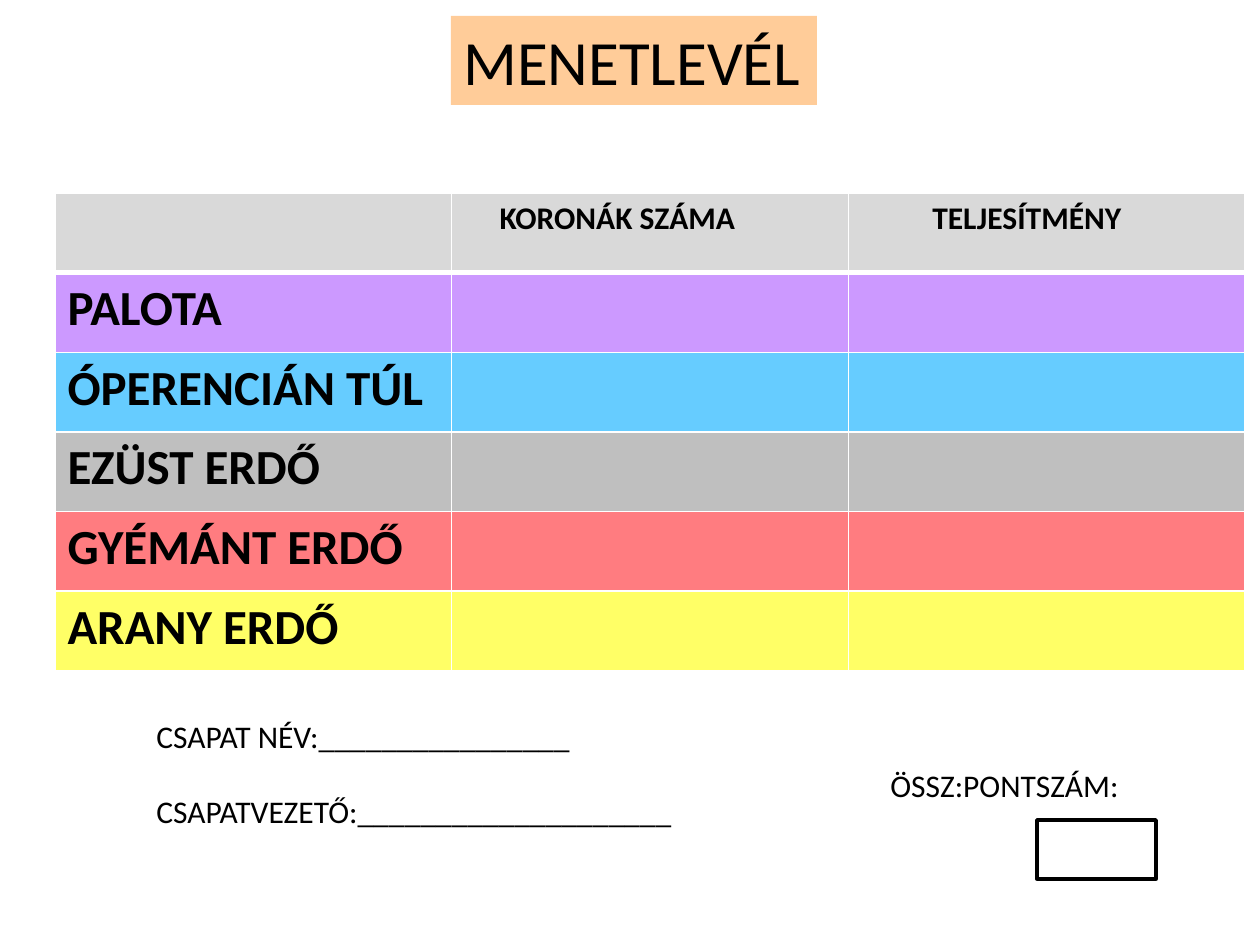
import pptx
import pptx.dml.color
import pptx.enum.shapes
import pptx.oxml
import pptx.oxml.ns
import pptx.util

EMU_PER_PX = 914400 / 126
FONT = "Calibri"
COLORS = {
    "text": "000000",
    "white": "FFFFFF",
    "title": "FFCC99",
    "header": "D9D9D9",
    "palace": "CC99FF",
    "beyond": "66CCFF",
    "silver": "BFBFBF",
    "diamond": "FF7C80",
    "gold": "FFFF66",
}
# Column heading and its indent in px
HEADINGS = [("", 13), ("KORONÁK SZÁMA", 48), ("TELJESÍTMÉNY", 84)]
STATIONS = [
    ("PALOTA", "palace"),
    ("ÓPERENCIÁN TÚL", "beyond"),
    ("EZÜST ERDŐ", "silver"),
    ("GYÉMÁNT ERDŐ", "diamond"),
    ("ARANY ERDŐ", "gold"),
]


def px(length):
    return pptx.util.Emu(round(length * EMU_PER_PX))


def rgb(name):
    return pptx.dml.color.RGBColor.from_string(COLORS[name])


def style_text(para, size, bold=False):
    for span in para.runs:
        span.font.name = FONT
        span.font.size = pptx.util.Pt(size)
        span.font.bold = bold
        span.font.color.rgb = rgb("text")


def add_text(page, left, top, width, height, lines, size, gap=0):
    box = page.shapes.add_textbox(px(left), px(top), px(width), px(height))
    frame = box.text_frame
    frame.word_wrap = False
    frame.text = "\n".join(lines)
    for index, para in enumerate(frame.paragraphs):
        if index:
            para.space_before = pptx.util.Pt(gap)
        style_text(para, size)
    return box


def set_borders(cell, top, bottom):
    properties = cell._tc.get_or_add_tcPr()
    for side, width in (("L", 1), ("R", 1), ("T", top), ("B", bottom)):
        properties.append(pptx.oxml.parse_xml(
            f'<a:ln{side} {pptx.oxml.ns.nsdecls("a")} w="{pptx.util.Pt(width)}">'
            f'<a:solidFill><a:srgbClr val="{COLORS["white"]}"/></a:solidFill>'
            f'</a:ln{side}>'))


def fill_cell(cell, text, color, size, top=1, bottom=1):
    set_borders(cell, top, bottom)
    cell.fill.solid()
    cell.fill.fore_color.rgb = rgb(color)
    if text:
        cell.text_frame.text = text
        style_text(cell.text_frame.paragraphs[0], size, bold=True)


def add_score_table(page, left, top, width, height):
    table = page.shapes.add_table(
        len(STATIONS) + 1, len(HEADINGS),
        px(left), px(top), px(width), px(height)).table
    # Heading row, with a heavy rule below it
    for column, (heading, indent) in enumerate(HEADINGS):
        cell = table.cell(0, column)
        fill_cell(cell, heading, "header", 18, bottom=3)
        cell.margin_left = px(indent)
    # One coloured row per station
    for row, (station, color) in enumerate(STATIONS, start=1):
        for column in range(len(HEADINGS)):
            fill_cell(table.cell(row, column), "" if column else station,
                      color, 28, top=3 if row == 1 else 1)


def add_score_frame(page, left, top, width, height):
    frame = page.shapes.add_shape(
        pptx.enum.shapes.MSO_SHAPE.RECTANGLE,
        px(left), px(top), px(width), px(height))
    frame.shadow.inherit = False
    frame.fill.background()
    frame.line.color.rgb = rgb("text")
    frame.line.width = pptx.util.Pt(2)


def main():
    deck = pptx.Presentation()
    deck.slide_width, deck.slide_height = px(1260), px(945)
    page = deck.slides.add_slide(deck.slide_layouts[6])

    # Title
    title = add_text(page, 451, 16, 366, 89, ["MENETLEVÉL"], 36)
    title.fill.solid()
    title.fill.fore_color.rgb = rgb("title")

    # Scores by station
    add_score_table(page, 55, 193, 1190, 478)

    # Team details and total score
    add_text(page, 144, 711, 553, 127,
             ["CSAPAT NÉV:" + "_" * 16, "CSAPATVEZETŐ:" + "_" * 20], 18, gap=21)
    add_text(page, 878, 760, 256, 127, ["ÖSSZ:PONTSZÁM:"], 18)
    add_score_frame(page, 1037, 820, 119, 59)

    deck.save("out.pptx")


if __name__ == "__main__":
    main()
